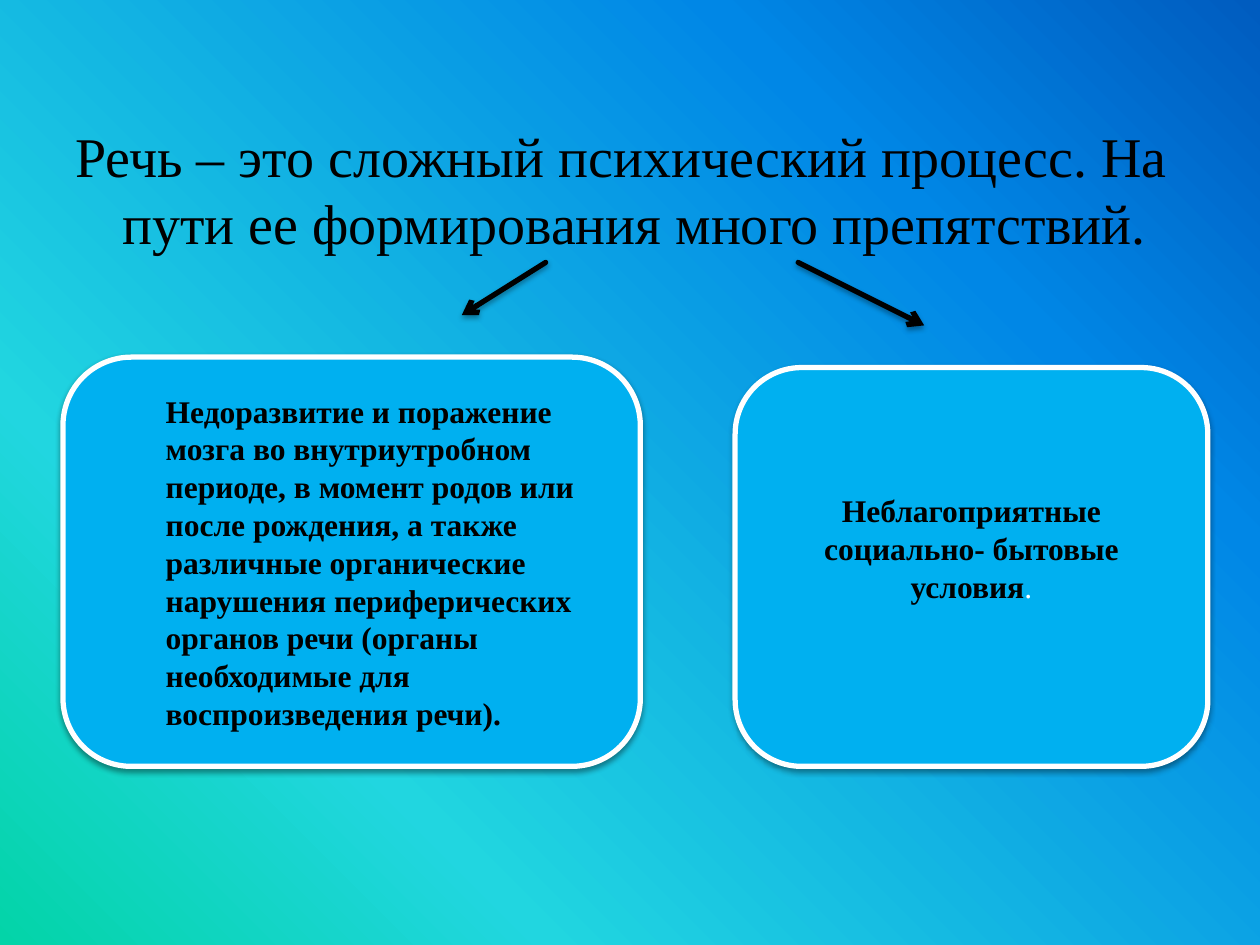
import pptx
import pptx.util
import pptx.dml.color
import pptx.enum.shapes
import pptx.enum.text
import pptx.oxml.ns
from dataclasses import dataclass
from lxml import etree
from pptx.util import Cm, Pt

ALIGN = pptx.enum.text.PP_ALIGN
ANCHOR = pptx.enum.text.MSO_ANCHOR
qn = pptx.oxml.ns.qn


@dataclass(frozen=True)
class Theme:
    font: str = "Times New Roman"
    title_size: int = 32
    body_size: int = 18
    line_width: int = 3
    ink: str = "000000"
    light: str = "FFFFFF"
    card: str = "00B0F0"
    gradient: tuple = ((0, "03D4A8"), (25, "21D6E0"), (75, "0087E6"), (100, "005CBF"))


THEME = Theme()


def rgb(value):
    return pptx.dml.color.RGBColor.from_string(value)


def style_run(r, size, bold=False, color=THEME.ink):
    r.font.name = THEME.font
    r.font.size = Pt(size)
    r.font.bold = bold
    r.font.color.rgb = rgb(color)


def indent(p, margin, first=0):
    pPr = p._p.get_or_add_pPr()
    pPr.set("marL", str(Cm(margin)))
    pPr.set("indent", str(Cm(first)))


def add_color(parent, value):
    return etree.SubElement(parent, qn("a:srgbClr"), val=value)


def add_shadow(sp, distance, opacity):
    """Soft shadow falling straight down."""
    effects = etree.SubElement(sp._element.spPr, qn("a:effectLst"))
    shadow = etree.SubElement(effects, qn("a:outerShdw"), blurRad=str(Pt(3.1)),
                              dist=str(Pt(distance)), dir="5400000", rotWithShape="0")
    etree.SubElement(add_color(shadow, THEME.ink), qn("a:alpha"), val=str(opacity * 1000))


def paint_background(s):
    fill = s.background.fill
    fill.gradient()
    fill.gradient_angle = 45
    stops = s.background._cSld.find(".//" + qn("a:gsLst"))
    for stop in list(stops):
        stops.remove(stop)
    for position, color in THEME.gradient:
        add_color(etree.SubElement(stops, qn("a:gs"), pos=str(position * 1000)), color)


def add_heading(s, box, text):
    tf = s.shapes.add_textbox(*map(Cm, box)).text_frame
    tf.word_wrap = True
    p = tf.paragraphs[0]
    p.text = text
    indent(p, 0.95, -0.95)
    style_run(p.runs[0], THEME.title_size)


def add_card(s, box, text, align, margin=0, lift=0):
    """Rounded card; lift raises the centred text by that length."""
    sp = s.shapes.add_shape(pptx.enum.shapes.MSO_SHAPE.ROUNDED_RECTANGLE, *map(Cm, box))
    sp.fill.solid()
    sp.fill.fore_color.rgb = rgb(THEME.card)
    sp.line.color.rgb = rgb(THEME.light)
    sp.line.width = Pt(THEME.line_width)
    add_shadow(sp, distance=1.6, opacity=38)
    tf = sp.text_frame
    tf.word_wrap = True
    tf.vertical_anchor = ANCHOR.MIDDLE
    tf.margin_bottom += Cm(2 * lift)
    p = tf.paragraphs[0]
    p.text = text
    p.alignment = align
    indent(p, margin)
    style_run(p.runs[0], THEME.body_size, bold=True)
    return p


def add_arrow(s, start, end):
    line = s.shapes.add_connector(pptx.enum.shapes.MSO_CONNECTOR.STRAIGHT,
                                  *map(Cm, start + end))
    line.line.color.rgb = rgb(THEME.ink)
    line.line.width = Pt(THEME.line_width)
    ln = line.line._get_or_add_ln()
    ln.set("cap", "rnd")
    etree.SubElement(ln, qn("a:tailEnd"), type="arrow")
    add_shadow(line, distance=1.8, opacity=35)


def build_causes_slide(prs):
    s = prs.slides.add_slide(prs.slide_layouts[6])
    paint_background(s)

    # Statement
    add_heading(s, (1.27, 2.33, 22.86, 12.58),
                "Речь – это сложный психический процесс. "
                "На пути ее формирования много препятствий.")

    # Two groups of causes
    add_card(s, (1.27, 7.2, 11.64, 8.25),
             "Недоразвитие и поражение мозга во внутриутробном периоде, в момент родов "
             "или после рождения, а также различные органические нарушения периферических "
             "органов речи (органы необходимые для воспроизведения речи).",
             ALIGN.LEFT, margin=1.42)
    p = add_card(s, (14.82, 7.41, 9.53, 8.04),
                 "Неблагоприятные социально- бытовые условия", ALIGN.CENTER, lift=0.38)
    r = p.add_run()
    r.text = "."
    style_run(r, THEME.body_size, color=THEME.light)

    # Arrows from the statement to the causes
    add_arrow(s, (11, 5.29), (9.31, 6.35))
    add_arrow(s, (16.09, 5.29), (18.63, 6.56))


def main():
    prs = pptx.Presentation()
    prs.slide_width, prs.slide_height = Cm(25.4), Cm(19.05)
    build_causes_slide(prs)
    prs.save("out.pptx")


if __name__ == "__main__":
    main()
